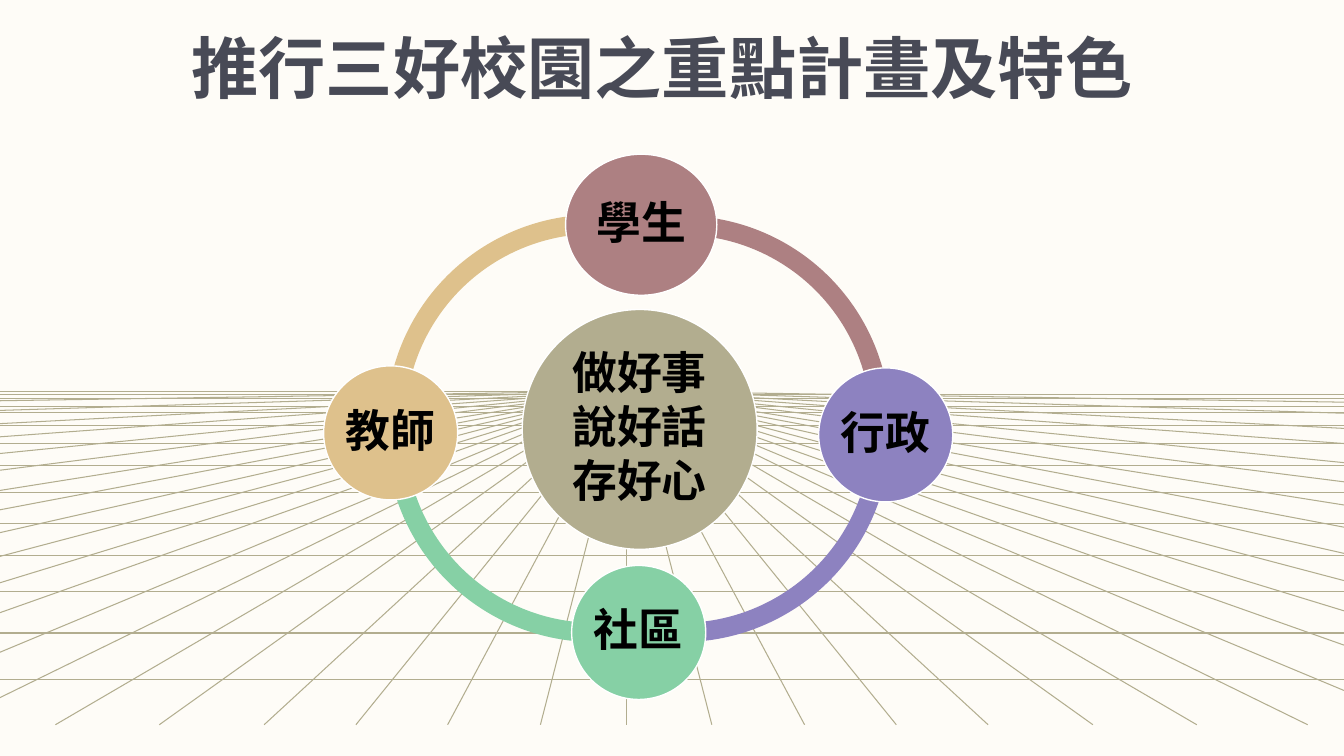
from dataclasses import dataclass

import lxml.etree
import pptx
import pptx.dml.color
import pptx.enum.shapes
import pptx.enum.text
import pptx.oxml.ns
import pptx.util

Inches = pptx.util.Inches
Pt = pptx.util.Pt
RGB = pptx.dml.color.RGBColor.from_string
Shape = pptx.enum.shapes.MSO_SHAPE
Anchor = pptx.enum.text.MSO_ANCHOR
Align = pptx.enum.text.PP_ALIGN
qn = pptx.oxml.ns.qn


@dataclass(frozen=True)
class Theme:
    font: str = "Noto Sans CJK SC"
    background: str = "FEFCF7"
    title: str = "484A56"
    label: str = "000000"
    outline: str = "FFFFFF"
    olive: str = "B2AD8F"
    rose: str = "AD8082"
    violet: str = "8D82C0"
    green: str = "86D0A5"
    sand: str = "DEC18C"
    title_size: int = 48
    label_size: int = 32
    grid_width: float = 0.75
    outline_width: float = 1


@dataclass(frozen=True)
class Box:
    """A region in inches."""
    left: float
    top: float
    width: float
    height: float

    def inside(self, left, top, width, height):
        return Box(self.left + left, self.top + top, width, height)

    def lengths(self):
        return [Inches(n) for n in (self.left, self.top, self.width, self.height)]


THEME = Theme()

# Distances below the horizon at which rays meet the left and right edges
RAY_DROPS = (0.11, 0.22, 0.37, 0.52, 0.71, 0.9, 1.13, 1.35, 1.61, 1.88, 2.18, 2.52, 2.97)
# Distances from the centre at which rays meet the bottom edge
RAY_SPREADS = (0.85, 1.77, 2.68, 3.59, 4.63, 5.66, 6.76)
ROW_DROPS = (0.03, 0.07, 0.15, 0.21, 0.34, 0.52, 0.74, 1.01, 1.31, 1.63, 1.99, 2.4, 2.86)

# Left, top, start, end, colour
ARC_SIZE = 4.14
ARC_THICKNESS = 0.046
ARCS = (
    (0.62, 0.6, 106.471, 169.819, THEME.sand),
    (0.62, 0.7, 46.655, 108.139, THEME.green),
    (1.48, 0.7, 0.29, 61.346, THEME.violet),
    (1.48, 0.61, 155.047, 1.774, THEME.rose),
)
# Lines, place, colour
CIRCLES = (
    (("做好事", "說好話", "存好心"), (1.97, 1.54, 2.33, 2.38), THEME.olive),
    (("學生",), (2.4, 0, 1.5, 1.4), THEME.rose),
    (("行政",), (4.91, 2.12, 1.33, 1.33), THEME.violet),
    (("社區",), (2.46, 4.08, 1.33, 1.33), THEME.green),
    (("教師",), (0, 2.1, 1.33, 1.33), THEME.sand),
)


def style_paragraph(para, size, color):
    font = para.font
    font.size = Pt(size)
    font.bold = True
    font.color.rgb = RGB(color)
    font.name = THEME.font
    east_asian = lxml.etree.SubElement(font._element, qn("a:ea"))
    east_asian.set("typeface", THEME.font)


def add_title(page, box):
    title = page.shapes.add_textbox(*box.lengths())
    frame = title.text_frame
    frame.word_wrap = True
    frame.auto_size = pptx.enum.text.MSO_AUTO_SIZE.NONE
    frame.vertical_anchor = Anchor.MIDDLE
    frame.margin_bottom = Inches(0.27)
    para = frame.paragraphs[0]
    para.text = "推行三好校園之重點計畫及特色"
    para.line_spacing = 0.99
    style_paragraph(para, THEME.title_size, THEME.title)


def add_grid_line(group, start, end):
    line = group.shapes.add_connector(
        pptx.enum.shapes.MSO_CONNECTOR.STRAIGHT,
        *(Inches(n) for n in (*start, *end)))
    line.line.color.rgb = RGB(THEME.olive)
    line.line.width = Pt(THEME.grid_width)
    lxml.etree.SubElement(line._element.spPr, qn("a:effectLst"))


def add_floor(page, box):
    """Draw the perspective grid, whose rays leave the middle of the top edge."""
    group = page.shapes.add_group_shape()
    half = box.width / 2
    center = box.left + half
    right, bottom = box.left + box.width, box.top + box.height
    vanishing = (center, box.top)

    add_grid_line(group, vanishing, (box.left, box.top))
    add_grid_line(group, vanishing, (center, bottom))
    for side in (-1, 1):
        for drop in RAY_DROPS:
            add_grid_line(group, vanishing, (center + side * half, box.top + drop))
        for spread in RAY_SPREADS:
            add_grid_line(group, vanishing, (center + side * spread, bottom))
    for drop in ROW_DROPS:
        add_grid_line(group, (box.left, box.top + drop), (right, box.top + drop))


def add_filled(group, kind, box, color):
    shape = group.shapes.add_shape(kind, *box.lengths())
    shape.shadow.inherit = False
    shape.fill.solid()
    shape.fill.fore_color.rgb = RGB(color)
    return shape


def add_circle(group, box, lines, color):
    circle = add_filled(group, Shape.OVAL, box, color)
    circle.line.color.rgb = RGB(THEME.outline)
    circle.line.width = Pt(THEME.outline_width)
    frame = circle.text_frame
    frame.word_wrap = False
    frame.vertical_anchor = Anchor.MIDDLE
    frame.margin_left = frame.margin_right = Inches(0.04)
    frame.margin_top = frame.margin_bottom = Inches(0.04)
    for index, text in enumerate(lines):
        para = frame.add_paragraph() if index else frame.paragraphs[0]
        para.text = text
        para.alignment = Align.CENTER
        para.line_spacing = 0.9
        para.space_after = Pt(4)
        style_paragraph(para, THEME.label_size, THEME.label)


def add_cycle(page, box):
    group = page.shapes.add_group_shape()
    for left, top, start, end, color in ARCS:
        place = box.inside(left, top, ARC_SIZE, ARC_SIZE)
        arc = add_filled(group, Shape.BLOCK_ARC, place, color)
        arc.line.fill.background()
        for index, value in enumerate((start, end, ARC_THICKNESS)):
            arc.adjustments[index] = value
    for lines, place, color in CIRCLES:
        add_circle(group, box.inside(*place), lines, color)


def main():
    deck = pptx.Presentation()
    deck.slide_width = Inches(13.33)
    deck.slide_height = Inches(7.5)
    page = deck.slides.add_slide(deck.slide_layouts[6])
    page.background.fill.solid()
    page.background.fill.fore_color.rgb = RGB(THEME.background)
    add_title(page, Box(1.8, 0.29, 9.59, 1.03))
    add_floor(page, Box(-0.91, 3.88, 14.24, 3.31))
    add_cycle(page, Box(3.21, 1.53, 6.24, 5.41))
    deck.save("out.pptx")


if __name__ == "__main__":
    main()
